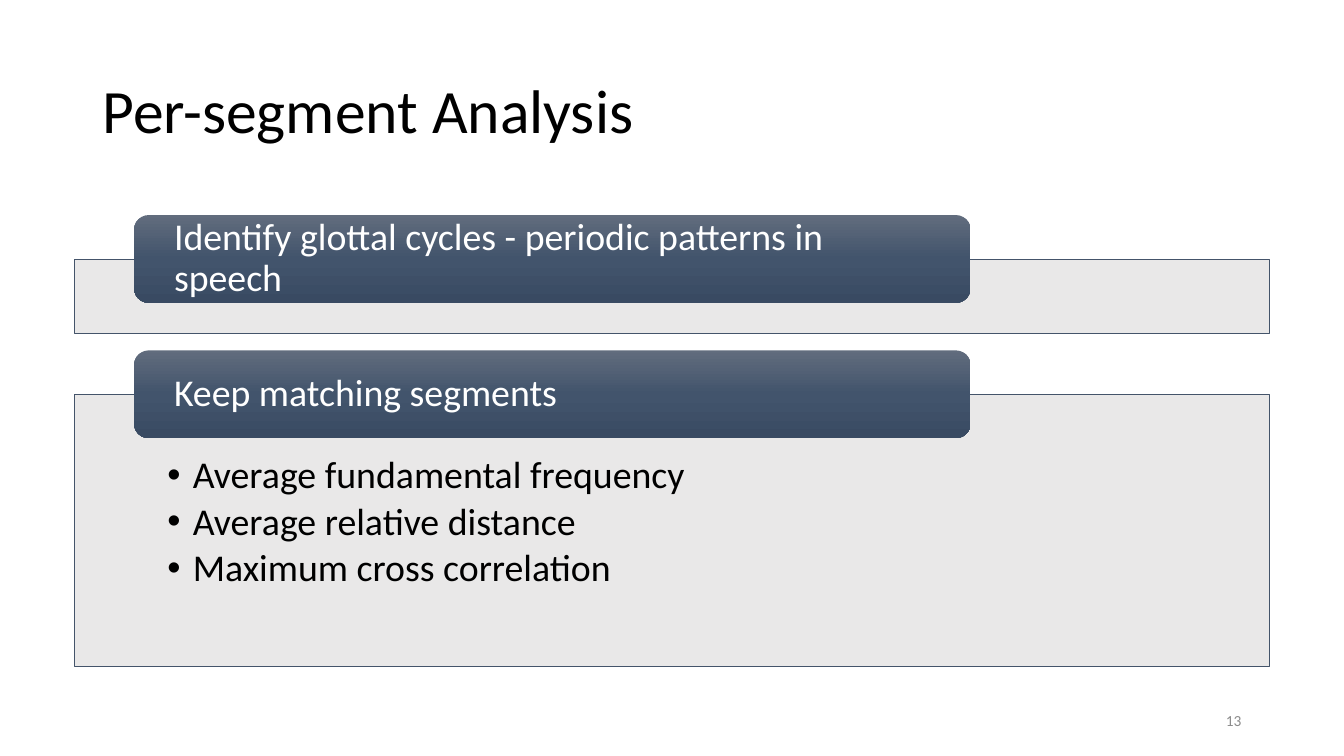
from copy import deepcopy

from lxml import etree
from pptx import Presentation
from pptx.dml.color import RGBColor
from pptx.enum import shapes, text
from pptx.oxml.ns import qn
from pptx.util import Cm, Pt

# Content
TITLE = "Per-segment Analysis"
PAGE = "13"
# heading, panel height in cm, bullets
SECTIONS = [
    ("Identify glottal cycles - periodic patterns in speech", 1.88, []),
    ("Keep matching segments", 6.86, [
        "Average fundamental frequency",
        "Average relative distance",
        "Maximum cross correlation",
    ]),
]

# Style and measures (cm)
FONT = "Calibri"
COLORS = {"text": "000000", "light": "FFFFFF", "page": "8C8C8C",
          "panel": "E7E6E6", "edge": "44546A"}
TAB_STOPS = [(0, "616C7D"), (0.5, "42546C"), (1, "394A62")]
PANEL_LEFT, PANEL_WIDTH, FIRST_TOP, PANEL_GAP = 1.88, 30.12, 6.53, 1.53
TAB_LEFT, TAB_WIDTH, TAB_HEIGHT, TAB_RISE = 3.38, 21.08, 2.21, 1.11


def rgb(name):
    return RGBColor.from_string(COLORS[name])


def add_text(p, words, size, color):
    r = p.add_run()
    r.text = words
    r.font.name, r.font.size = FONT, Pt(size)
    r.font.color.rgb = rgb(color)


def set_frame(sp, anchor, *insets):
    tf = sp.text_frame
    tf.word_wrap = True
    tf.auto_size = text.MSO_AUTO_SIZE.NONE
    tf.vertical_anchor = anchor
    if insets:
        (tf.margin_left, tf.margin_top,
         tf.margin_right, tf.margin_bottom) = map(Cm, insets)
    return tf


def add_bullet(p):
    pPr = p._p.get_or_add_pPr()
    pPr.set("marL", str(Cm(0.64)))
    pPr.set("indent", str(-Cm(0.64)))
    etree.SubElement(pPr, qn("a:buFont")).set("typeface", "Arial")
    etree.SubElement(pPr, qn("a:buChar")).set("char", "•")


def add_panel(s, top, height, bullets):
    sp = s.shapes.add_shape(shapes.MSO_SHAPE.RECTANGLE, Cm(PANEL_LEFT), Cm(top),
                            Cm(PANEL_WIDTH), Cm(height))
    sp.shadow.inherit = False
    sp.fill.solid()
    sp.fill.fore_color.rgb = rgb("panel")
    color = sp.fill._xPr.find(qn("a:solidFill"))[0]
    etree.SubElement(color, qn("a:alpha")).set("val", "90000")
    sp.line.color.rgb = rgb("edge")
    sp.line.width = Pt(0.5)
    if not bullets:
        return
    tf = set_frame(sp, text.MSO_ANCHOR.TOP, 2.34, 1.55, 2.34, 0.53)
    for i, words in enumerate(bullets):
        p = tf.add_paragraph() if i else tf.paragraphs[0]
        add_bullet(p)
        p.alignment = text.PP_ALIGN.LEFT
        p.line_spacing = 0.9
        p.space_after = Pt(4)
        add_text(p, words, 27, "text")


def add_tab(s, top, heading):
    sp = s.shapes.add_shape(shapes.MSO_SHAPE.ROUNDED_RECTANGLE, Cm(TAB_LEFT), Cm(top),
                            Cm(TAB_WIDTH), Cm(TAB_HEIGHT))
    sp.shadow.inherit = False
    sp.line.fill.background()
    sp.fill.gradient()
    sp.fill.gradient_angle = 270
    stops = sp.fill._xPr.find(qn("a:gradFill")).find(qn("a:gsLst"))
    stops.append(deepcopy(stops[0]))
    for stop, (position, color) in zip(sp.fill.gradient_stops, TAB_STOPS):
        stop.position = position
        stop.color.rgb = RGBColor.from_string(color)
    p = set_frame(sp, text.MSO_ANCHOR.MIDDLE, 0.9, 0, 0.9, 0).paragraphs[0]
    p.alignment = text.PP_ALIGN.LEFT
    p.line_spacing = 0.9
    add_text(p, heading, 27, "light")


def main():
    prs = Presentation()
    prs.slide_width, prs.slide_height = Cm(33.87), Cm(19.05)
    s = prs.slides.add_slide(prs.slide_layouts[5])

    # Title
    title = s.shapes.title
    title.left, title.top, title.width, title.height = map(Cm, (2.33, 1.01, 29.21, 3.68))
    p = set_frame(title, text.MSO_ANCHOR.MIDDLE).paragraphs[0]
    p.alignment = text.PP_ALIGN.LEFT
    p.line_spacing = 0.9
    add_text(p, TITLE, 44, "text")

    # Panels, each with a heading tab over its top edge
    top = FIRST_TOP
    for heading, height, bullets in SECTIONS:
        add_panel(s, top, height, bullets)
        add_tab(s, top - TAB_RISE, heading)
        top += height + PANEL_GAP

    # Page number
    sp = s.shapes.add_textbox(Cm(23.92), Cm(17.66), Cm(7.62), Cm(1.01))
    p = set_frame(sp, text.MSO_ANCHOR.MIDDLE).paragraphs[0]
    p.alignment = text.PP_ALIGN.RIGHT
    add_text(p, PAGE, 11, "page")

    prs.save("out.pptx")


if __name__ == "__main__":
    main()
